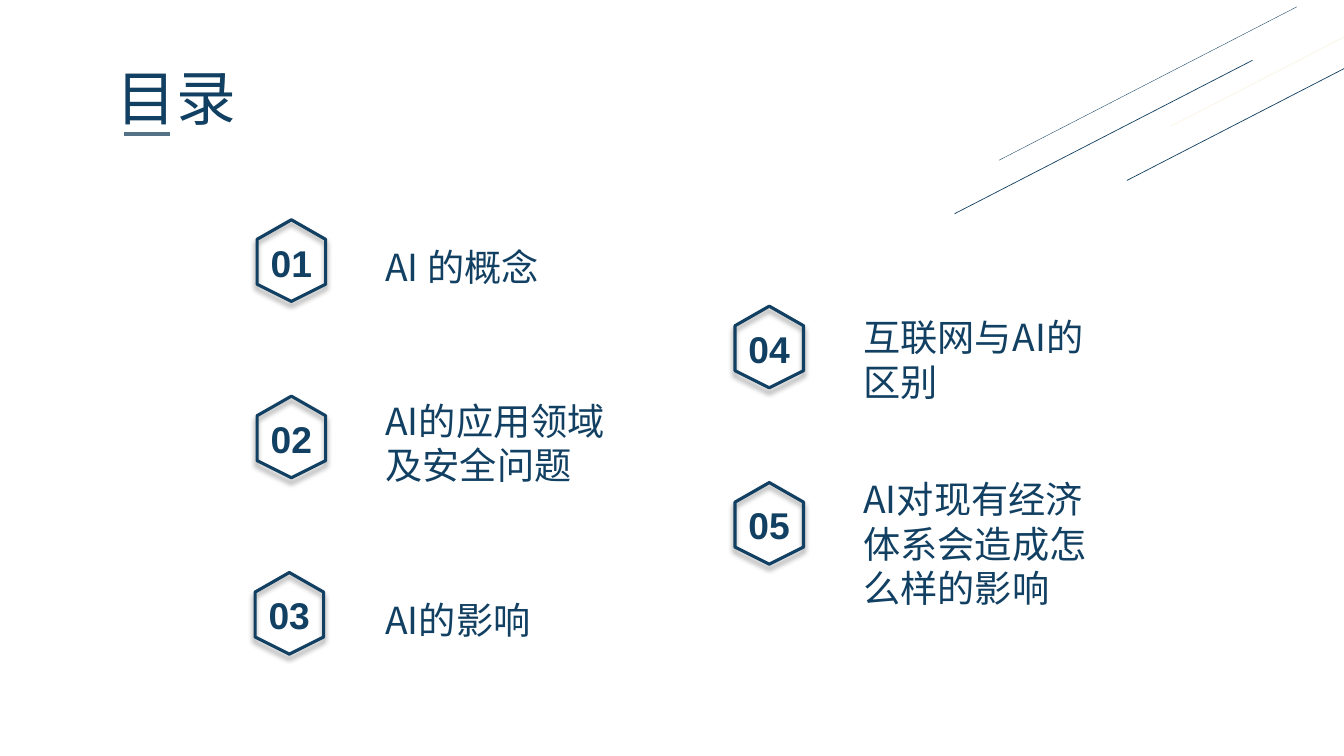
from lxml.etree import SubElement
from pptx import Presentation
from pptx.dml.color import RGBColor
from pptx.enum.shapes import MSO_CONNECTOR
from pptx.enum.text import PP_ALIGN
from pptx.oxml.ns import qn
from pptx.util import Emu, Inches, Pt

THEME = {
    "navy": RGBColor.from_string("124062"),
    "slate": RGBColor.from_string("537285"),
    "gold": RGBColor.from_string("DCAA1F"),
    "heading": 42.6,
    "item": 26.6,
    "cjk": "Noto Sans CJK SC",
    "latin": "Arial",
}

deck = Presentation()
deck.slide_width, deck.slide_height = Emu(12192000), Emu(6858000)
slide = deck.slides.add_slide(deck.slide_layouts[6])
X, Y = deck.slide_width / 100, deck.slide_height / 100


def add_text(text, left, top, width, height, size, badge=False):
    box = slide.shapes.add_textbox(
        Emu(round(left * X)), Emu(round(top * Y)),
        Emu(round(width * X)), Emu(round(height * Y)))
    frame = box.text_frame
    frame.word_wrap = not badge
    line = frame.paragraphs[0]
    run = line.add_run()
    run.text = text
    face = THEME["latin"] if badge else THEME["cjk"]
    for name, value in {"size": Pt(size), "name": face, "bold": badge}.items():
        setattr(run.font, name, value)
    run.font.color.rgb = THEME["navy"]
    if badge:
        line.alignment = PP_ALIGN.CENTER
    else:
        SubElement(run.font._element, qn("a:ea"), typeface=face)
        line.line_spacing = Pt(round(size * 1.19, 1))
        frame.margin_top = Inches(0.05) + Pt(size * 0.12)


def add_line(start, end, color, weight, opacity=100):
    (x1, y1), (x2, y2) = start, end
    stroke = slide.shapes.add_connector(
        MSO_CONNECTOR.STRAIGHT, Emu(round(x1 * X)), Emu(round(y1 * Y)),
        Emu(round(x2 * X)), Emu(round(y2 * Y)))
    stroke.line.color.rgb = THEME[color]
    stroke.line.width = Pt(weight)
    if opacity < 100:
        tint = stroke._element.spPr.find(".//" + qn("a:srgbClr"))
        SubElement(tint, qn("a:alpha"), val=str(opacity * 1000))
    SubElement(stroke._element.spPr, qn("a:effectLst"))


add_text("目录", 7.95, 6.53, 11.48, 10.93, THEME["heading"])
add_line((9.23, 17.73), (12.68, 17.73), "slate", 2.25)

RAY_RUN, RAY_RISE = 22.17, 20.3
for left, bottom, color, weight, opacity in [
    (71.03, 28.27, "navy", 0.5, 100),
    (74.33, 21.2, "navy", 0.25, 100),
    (83.85, 23.87, "navy", 0.5, 100),
    (87.15, 16.67, "gold", 0.25, 20),
]:
    add_line((left, bottom), (left + RAY_RUN, bottom - RAY_RISE),
             color, weight, opacity)

HEX_W, HEX_H, ROW_PITCH = 5.1, 10.8, 23.33
HEX_OUTLINE = [(0.5, 0), (1, 0.24), (1, 0.79), (0.5, 1), (0, 0.79), (0, 0.24)]
COLUMNS = [
    (19.13, 29.07, [
        ("AI 的概念", 1, 2, 0),
        ("AI的应用领域及安全问题", 2, -0.93, 0),
        ("AI的影响", 1, 2, -0.15),
    ]),
    (54.69, 40.5, [
        ("互联网与AI的区别", 2, -0.1, 0),
        ("AI对现有经济体系会造成怎么样的影响", 3, -2, 0),
    ]),
]

number = 0
for column, first_row, topics in COLUMNS:
    for row, (topic, lines, topic_shift, hex_shift) in enumerate(topics):
        number += 1
        left, top = column + hex_shift, first_row + row * ROW_PITCH
        corners = [((left + u * HEX_W) * X, (top + v * HEX_H) * Y)
                   for u, v in HEX_OUTLINE]
        outline = slide.shapes.build_freeform(*corners[0], scale=1.0)
        outline.add_line_segments(corners[1:], close=True)
        hexagon = outline.convert_to_shape()
        hexagon.fill.background()
        hexagon.line.color.rgb = THEME["navy"]
        hexagon.line.width = Pt(2.25)
        hexagon.shadow.inherit = False
        effects = hexagon._element.spPr.find(qn("a:effectLst"))
        shadow = SubElement(effects, qn("a:outerShdw"), blurRad=str(Pt(4)),
                            dist=str(Pt(3)), dir="5400000", rotWithShape="0")
        shade = SubElement(shadow, qn("a:srgbClr"), val="000000")
        SubElement(shade, qn("a:alpha"), val="40000")

        add_text(f"{number:02}", left + 0.22, top + 2, 4.65, 7.33,
                 THEME["item"], badge=True)
        add_text(topic, column + 8.8, top + topic_shift, 19.58,
                 1.33 + 6 * lines, THEME["item"])

deck.save("out.pptx")
